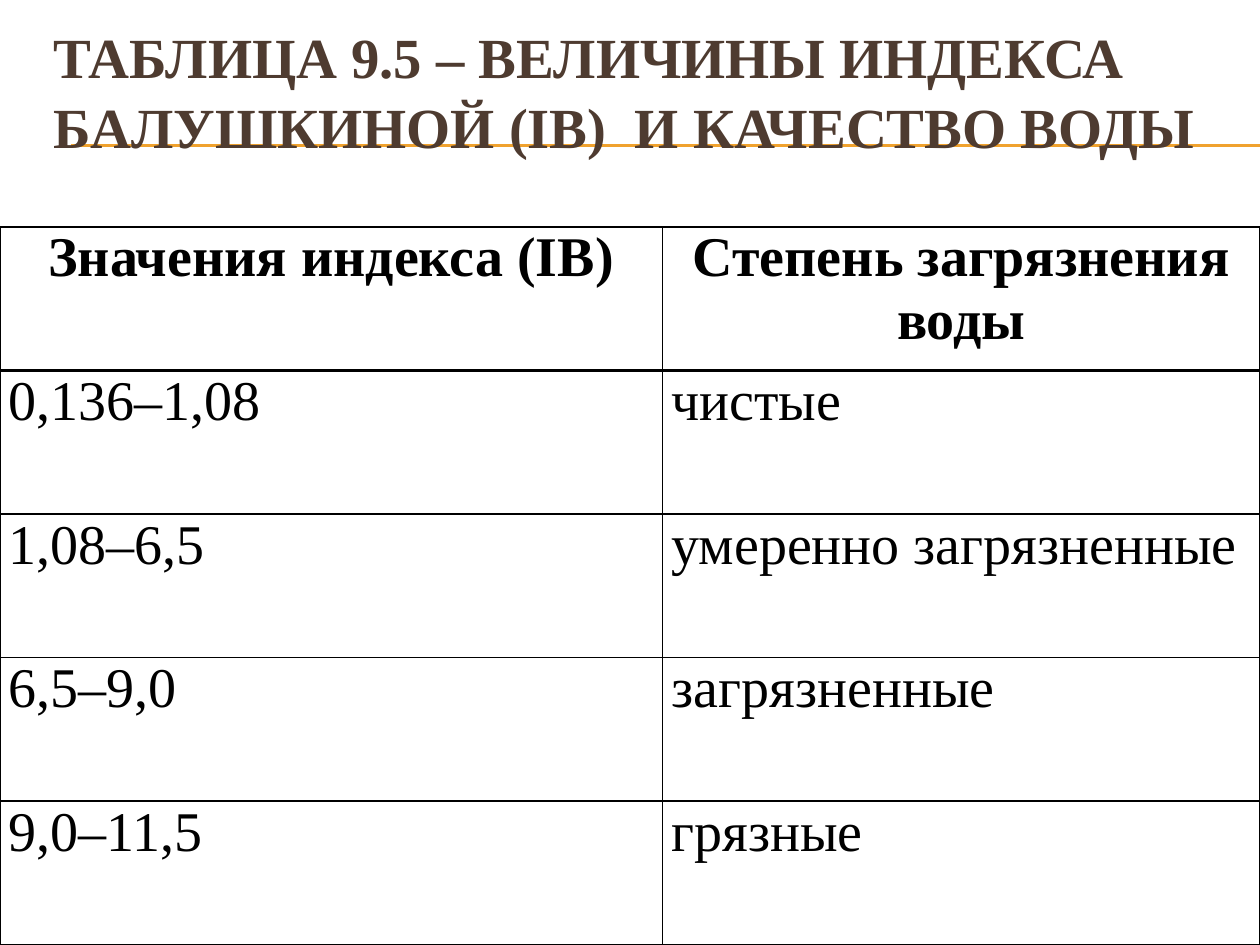
import pptx
import pptx.dml.color
import pptx.enum.shapes
import pptx.enum.text
import pptx.oxml.ns
import pptx.util
from lxml import etree
from pptx.util import Inches

RGBColor = pptx.dml.color.RGBColor
BROWN = RGBColor(0x4E, 0x3B, 0x30)
ORANGE = RGBColor(0xF0, 0xA2, 0x2E)
BLACK = RGBColor(0, 0, 0)
Align = pptx.enum.text.PP_ALIGN
qn = pptx.oxml.ns.qn

TITLE = "ТАБЛИЦА 9.5 – ВЕЛИЧИНЫ ИНДЕКСА БАЛУШКИНОЙ (IB)  И КАЧЕСТВО ВОДЫ"
WATER_QUALITY = [
    ("Значения индекса (IB)", "Степень загрязнения воды"),
    ("0,136–1,08", "чистые "),
    ("1,08–6,5", "умеренно загрязненные"),
    ("6,5–9,0", "загрязненные"),
    ("9,0–11,5", "грязные"),
]
COLUMN_WIDTHS = (5.26, 4.74)


class SlideBuilder:
    font_name = "Times New Roman"

    def __init__(self, slide):
        self.slide = slide

    def add_run(self, paragraph, text, size, color, bold):
        run = paragraph.add_run()
        run.text = text
        run.font.name = self.font_name
        run.font.size = pptx.util.Pt(size)
        run.font.bold = bold
        run.font.color.rgb = color

    def add_rule(self, left, right, top):
        line = self.slide.shapes.add_connector(
            pptx.enum.shapes.MSO_CONNECTOR.STRAIGHT,
            Inches(left), Inches(top), Inches(right), Inches(top))
        line.line.color.rgb = ORANGE
        line.line.width = pptx.util.Pt(0.75)
        etree.SubElement(line._element.spPr, qn("a:effectLst"))

    def add_title(self, text, left, top, width, height):
        box = self.slide.shapes.add_textbox(
            Inches(left), Inches(top), Inches(width), Inches(height))
        frame = box.text_frame
        frame.word_wrap = True
        frame.vertical_anchor = pptx.enum.text.MSO_ANCHOR.MIDDLE
        frame.margin_bottom = Inches(0.55)
        paragraph = frame.paragraphs[0]
        paragraph.line_spacing = 1.04
        self.add_run(paragraph, text, 32.4, BROWN, True)

    def set_borders(self, cell, **widths):
        """Draw black cell borders; widths in points by side: L, R, T, B."""
        properties = cell._tc.get_or_add_tcPr()
        for index, (side, width) in enumerate(widths.items()):
            border = etree.Element(qn(f"a:ln{side}"), w=str(pptx.util.Pt(width)))
            fill = etree.SubElement(border, qn("a:solidFill"))
            etree.SubElement(fill, qn("a:srgbClr"), val=str(BLACK))
            properties.insert(index, border)

    def add_table(self, rows, column_widths, left, top, height):
        table = self.slide.shapes.add_table(
            len(rows), len(column_widths), Inches(left), Inches(top),
            Inches(sum(column_widths)), Inches(height)).table
        table.first_row = table.horz_banding = False
        for column, width in zip(table.columns, column_widths):
            column.width = Inches(width)
        for row_index, texts in enumerate(rows):
            header = row_index == 0
            for column_index, text in enumerate(texts):
                cell = table.cell(row_index, column_index)
                cell.fill.background()
                cell.margin_left = cell.margin_right = Inches(0.07)
                cell.margin_top = cell.margin_bottom = 0
                paragraph = cell.text_frame.paragraphs[0]
                paragraph.alignment = Align.CENTER if header else Align.JUSTIFY
                self.add_run(paragraph, text, 32, BLACK, header)
                self.set_borders(cell, L=1, R=1,
                                 T=1.5 if row_index == 1 else 1,
                                 B=1.5 if header else 1)


def main():
    presentation = pptx.Presentation()
    presentation.slide_width = Inches(10)
    presentation.slide_height = Inches(7.5)
    builder = SlideBuilder(
        presentation.slides.add_slide(presentation.slide_layouts[6]))
    for top in (1.15, 1.16):
        builder.add_rule(0.56, 10, top)
    builder.add_title(TITLE, 0.33, 0.5, 9.5, 0.92)
    builder.add_table(WATER_QUALITY, COLUMN_WIDTHS, 0, 1.8, 5.7)
    presentation.save("out.pptx")


if __name__ == "__main__":
    main()
